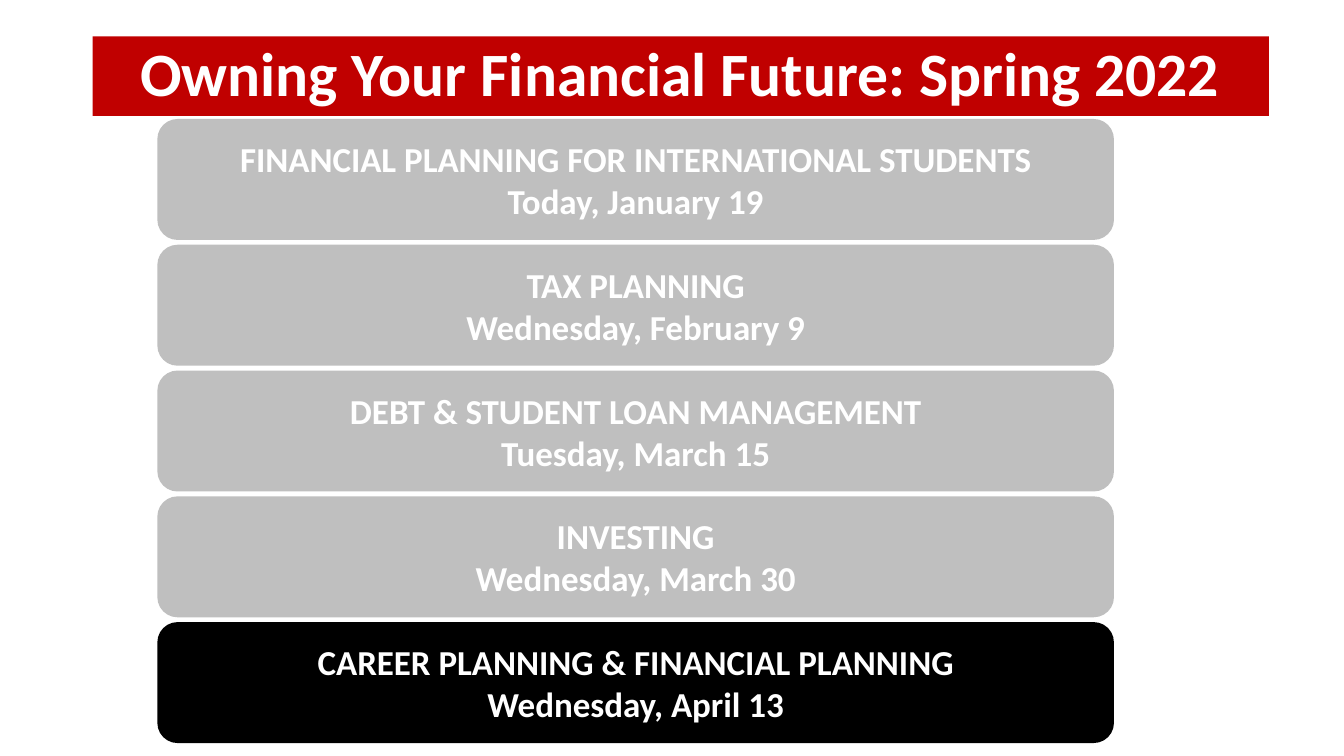
from pptx import Presentation
from pptx.dml.color import RGBColor
from pptx.enum.shapes import MSO_SHAPE as Kind
from pptx.enum.text import MSO_ANCHOR as Anchor, PP_ALIGN as Align
from pptx.util import Pt

EVENTS = [
    ("FINANCIAL PLANNING FOR INTERNATIONAL STUDENTS", "Today, January 19"),
    ("TAX PLANNING", "Wednesday, February 9"),
    ("DEBT & STUDENT LOAN MANAGEMENT", "Tuesday, March 15"),
    ("INVESTING", "Wednesday, March 30"),
    ("CAREER PLANNING & FINANCIAL PLANNING", "Wednesday, April 13"),
]
RED, GREY, BLACK, WHITE = "C00000", "BFBFBF", "000000", "FFFFFF"
TOP, STEP = 85, 89.85


def color(code):
    return RGBColor.from_string(code)


class Board:
    font = "Calibri"

    def __init__(self, slide):
        self.slide = slide

    def box(self, kind, area, fill, lines, size, spacing=1.0):
        """Add a filled shape with centred bold white lines."""
        shape = self.slide.shapes.add_shape(kind, *map(Pt, area))
        shape.shadow.inherit = False
        shape.fill.solid()
        shape.fill.fore_color.rgb = color(fill)
        shape.line.fill.background()
        frame = shape.text_frame
        frame.word_wrap = True
        frame.vertical_anchor = Anchor.MIDDLE
        frame.text = "\n".join(lines)
        for para in frame.paragraphs:
            para.alignment = Align.CENTER
            para.line_spacing = spacing
            for run in para.runs:
                run.font.name = self.font
                run.font.size = Pt(size)
                run.font.bold = True
                run.font.color.rgb = color(WHITE)

    def title(self, text):
        self.box(Kind.RECTANGLE, (66.2, 25.9, 840.2, 56.9), RED, [text], 44, 0.9)

    def event(self, row, lines, fill):
        area = (112.4, TOP + row * STEP, 683.3, 86.4)
        self.box(Kind.ROUNDED_RECTANGLE, area, fill, lines, 25)


def main():
    deck = Presentation()
    deck.slide_width, deck.slide_height = Pt(960), Pt(540)
    board = Board(deck.slides.add_slide(deck.slide_layouts[6]))
    board.title("Owning Your Financial Future: Spring 2022")
    last = len(EVENTS) - 1
    for row, lines in enumerate(EVENTS):
        board.event(row, lines, BLACK if row == last else GREY)
    deck.save("out.pptx")


if __name__ == "__main__":
    main()
